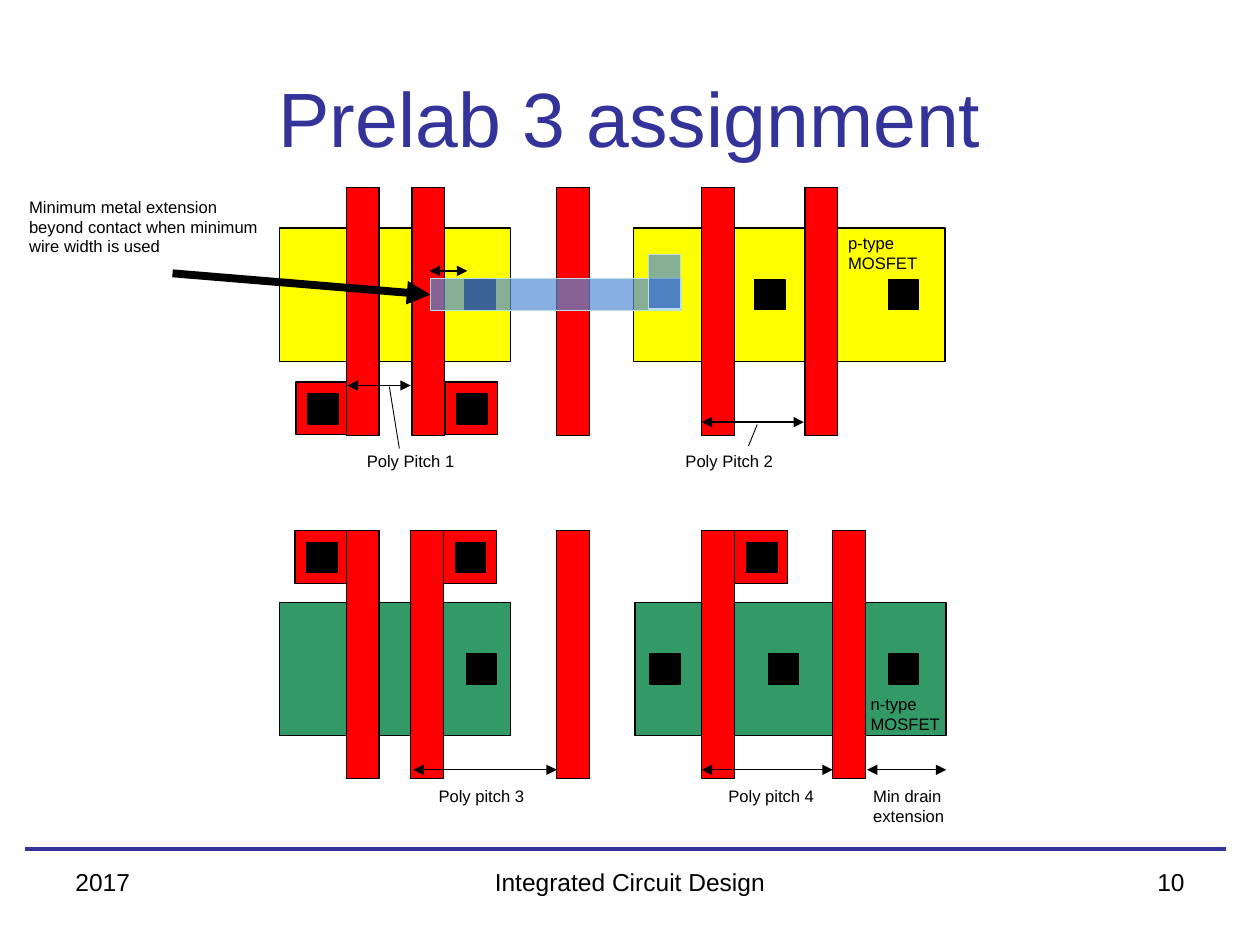
from lxml import etree
from pptx import Presentation
from pptx.dml.color import RGBColor
from pptx.enum.shapes import MSO_CONNECTOR, MSO_SHAPE
from pptx.enum.text import MSO_ANCHOR, PP_ALIGN
from pptx.oxml.ns import qn
from pptx.util import Pt

RECT = MSO_SHAPE.RECTANGLE
STRAIGHT = MSO_CONNECTOR.STRAIGHT
TOP, MIDDLE = MSO_ANCHOR.TOP, MSO_ANCHOR.MIDDLE
LEFT, CENTER, RIGHT = PP_ALIGN.LEFT, PP_ALIGN.CENTER, PP_ALIGN.RIGHT

BLACK = RGBColor(0x00, 0x00, 0x00)
WHITE = RGBColor(0xFF, 0xFF, 0xFF)
NAVY = RGBColor(0x33, 0x33, 0x99)
RED = RGBColor(0xFF, 0x00, 0x00)
YELLOW = RGBColor(0xFF, 0xFF, 0x00)
GREEN = RGBColor(0x33, 0x99, 0x66)
METAL = RGBColor(0x55, 0x8E, 0xD5)
METAL_EDGE = RGBColor(0xBB, 0xE0, 0xE3)

FONT = "Arial"
POLY_W, POLY_H = 18.7, 141.8
WELL_H = 76.3
PAD = 30.2
CONTACT = 17.3
CONTACT_INSET = 6.9
P_TOP, N_TOP = 107.3, 303.1


def add_rect(s, x, y, w, h, fill, line=BLACK):
    sp = s.shapes.add_shape(RECT, Pt(x), Pt(y), Pt(w), Pt(h))
    sp.shadow.inherit = False
    sp.fill.solid()
    sp.fill.fore_color.rgb = fill
    sp.line.color.rgb = line
    sp.line.width = Pt(0.75)
    return sp


def add_contact(s, x, y):
    add_rect(s, x, y, CONTACT, CONTACT, BLACK)


def add_pad(s, x, y):
    add_rect(s, x, y, PAD, PAD, RED)
    add_contact(s, x + CONTACT_INSET, y + CONTACT_INSET)


def add_metal(s, x, y, w, h):
    sp = add_rect(s, x, y, w, h, METAL, METAL_EDGE)
    color = sp.fill._xPr.find(qn("a:solidFill"))[0]
    etree.SubElement(color, qn("a:alpha")).set("val", "70000")
    return sp


def add_row(s, top, well_top, well_color, wells, polys, pads, contacts):
    for x, w in wells:
        add_rect(s, x, well_top, w, WELL_H, well_color)
    for x in contacts:
        add_contact(s, x, well_top + (WELL_H - CONTACT) / 2)
    for x, y in pads:
        add_pad(s, x, y)
    for x in polys:
        add_rect(s, x, top, POLY_W, POLY_H, RED)


def add_line(s, x1, y1, x2, y2, width, color=BLACK, ends=()):
    cn = s.shapes.add_connector(STRAIGHT, Pt(x1), Pt(y1), Pt(x2), Pt(y2))
    cn.line.color.rgb = color
    cn.line.width = Pt(width)
    ln = cn.line._get_or_add_ln()
    for end in ends:
        etree.SubElement(ln, qn(end)).set("type", "triangle")
    etree.SubElement(cn._element.spPr, qn("a:effectLst"))
    return cn


def add_dimension(s, x1, x2, y):
    add_line(s, x1, y, x2, y, 0.75, ends=("a:headEnd", "a:tailEnd"))


def format_text(tf, size, color, align):
    for p in tf.paragraphs:
        p.alignment = align
        for r in p.runs:
            r.font.name = FONT
            r.font.size = Pt(size)
            r.font.color.rgb = color


def add_text(s, text, x, y, w, h, size=9.5, align=LEFT, inset=(5.8, 2.9), fill=None):
    tb = s.shapes.add_textbox(Pt(x), Pt(y), Pt(w), Pt(h))
    if fill is not None:
        tb.fill.solid()
        tb.fill.fore_color.rgb = fill
    tf = tb.text_frame
    tf.word_wrap = True
    tf.vertical_anchor = TOP
    tf.margin_left = tf.margin_right = Pt(inset[0])
    tf.margin_top = tf.margin_bottom = Pt(inset[1])
    tf.text = text
    format_text(tf, size, BLACK, align)


def add_title(s, text):
    sp = s.shapes.title
    sp.left, sp.top, sp.width, sp.height = Pt(36), Pt(21.6), Pt(648), Pt(90)
    tf = sp.text_frame
    tf.text = text
    tf.vertical_anchor = MIDDLE
    format_text(tf, 44, NAVY, CENTER)


def add_footer(s):
    add_line(s, 14.4, 485.3, 700.6, 485.3, 2.25, NAVY)
    for text, x, w, align in (
        ("2017", 36, 168, LEFT),
        ("Integrated Circuit Design", 246, 228, CENTER),
        ("10", 516, 168, RIGHT),
    ):
        add_text(s, text, x, 492, w, 37.5, 14, align, (7.2, 3.6))


def add_labels(s):
    add_text(s, "Poly Pitch 1", 203.8, 254.9, 62.6, 25.2)
    add_text(s, "Poly Pitch 2", 385.9, 254.9, 83.5, 25.2)
    for text, x, w in (
        ("Poly pitch 3", 244.8, 83.5),
        ("Poly pitch 4", 410.4, 83.5),
        ("Min drain extension", 493.2, 57.6),
    ):
        add_text(s, text, x, 446.4, w, 23.8, fill=WHITE)
    add_text(s, "p-type\nMOSFET", 484.6, 130.3, 43.9, 35.3, inset=(0, 2.9))
    add_text(s, "n-type\nMOSFET", 497.5, 393.8, 43.9, 35.3, inset=(0, 2.9))
    add_text(
        s,
        "Minimum metal extension beyond contact when minimum wire width is used",
        10.8, 109.4, 143.3, 67,
    )


def add_dimensions(s):
    for x1, x2, y in (
        (198.7, 234.7, 220.3),
        (401, 459.4, 241.2),
        (236.2, 318.2, 439.9),
        (401, 475.9, 439.9),
        (495.4, 540.7, 439.9),
        (245.5, 267.1, 154.8),
    ):
        add_dimension(s, x1, x2, y)
    add_line(s, 222.5, 221, 228.2, 256.3, 0.5)
    add_line(s, 427.7, 254.9, 432.7, 242.6, 0.5)


def main():
    prs = Presentation()
    prs.slide_width, prs.slide_height = Pt(720), Pt(540)
    s = prs.slides.add_slide(prs.slide_layouts[5])
    add_title(s, "Prelab 3 assignment")
    add_footer(s)
    add_row(
        s, P_TOP, 130.3, YELLOW,
        wells=((159.8, 131.8), (362.2, 177.8)),
        polys=(198, 235.4, 318.2, 401, 460.1),
        pads=((169.2, 218.2), (254.2, 218.2)),
        contacts=(265.7, 371.5, 431.3, 507.6),
    )
    add_row(
        s, N_TOP, 344.2, GREEN,
        wells=((159.8, 131.8), (362.9, 177.8)),
        polys=(198, 234.7, 318.2, 401, 475.9),
        pads=((168.5, N_TOP), (253.4, N_TOP), (419.8, N_TOP)),
        contacts=(266.4, 371.5, 439.2, 507.6),
    )
    add_labels(s)
    add_dimensions(s)
    wire = add_metal(s, 246, 159.3, 143.3, 18.2)
    stub = add_metal(s, 364.3, 152, 31, 18.2)
    stub.rotation = 270
    pointer = add_line(s, 98.6, 156.2, 246, 168.4, 4.5, ends=("a:tailEnd",))
    pointer.end_connect(wire, 1)
    prs.save("out.pptx")


if __name__ == "__main__":
    main()
